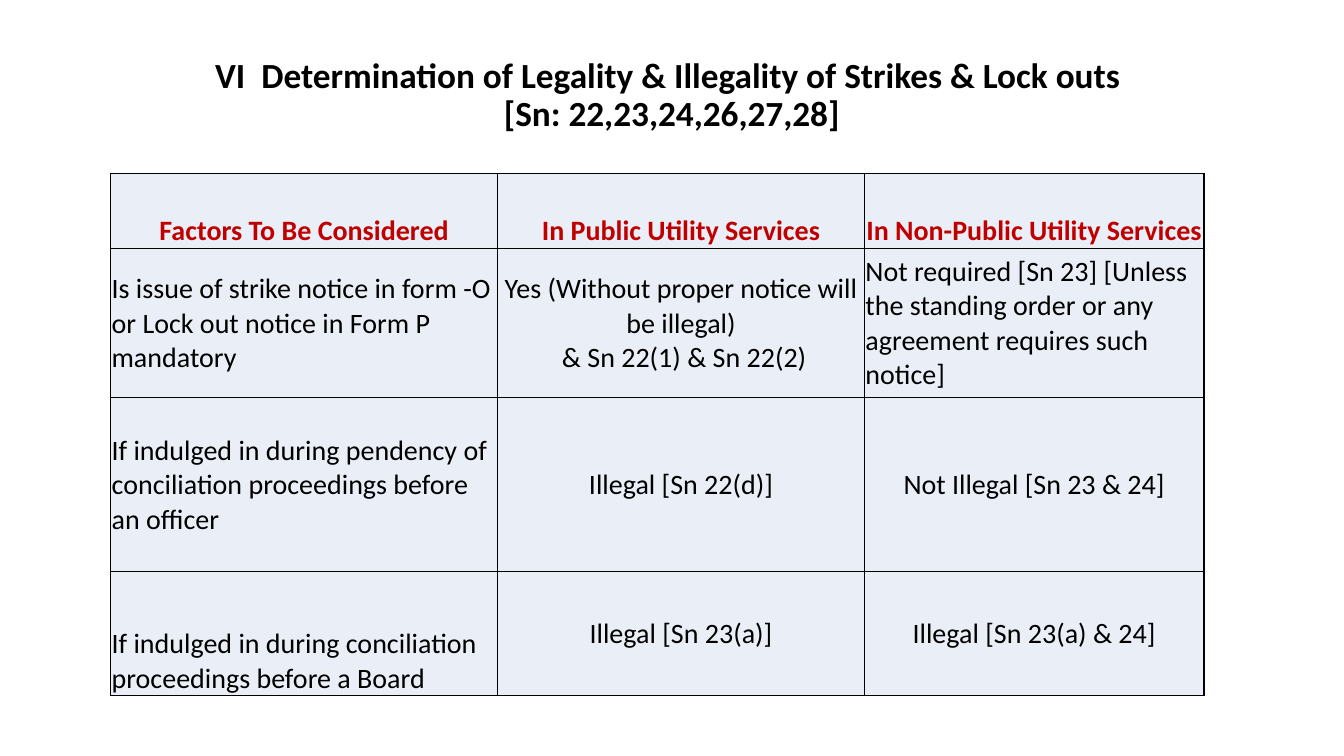
from dataclasses import dataclass

import lxml.etree
import pptx
import pptx.dml.color
import pptx.enum.text
import pptx.oxml
import pptx.oxml.ns
import pptx.util

Pt = pptx.util.Pt
Align = pptx.enum.text.PP_ALIGN
Anchor = pptx.enum.text.MSO_ANCHOR

BLACK, RED, PALE = "000000", "C00000", "EAEFF7"
WIDTHS = (276.5, 262, 242.5)
HEIGHTS = (53.5, 106.5, 124.5, 88.5)


@dataclass
class Cell:
    text: str
    align: Align = Align.CENTER
    anchor: Anchor = Anchor.MIDDLE
    color: str = BLACK
    bold: bool = False


def head(text: str) -> Cell:
    return Cell(text, anchor=Anchor.BOTTOM, color=RED, bold=True)


ROWS = (
    (
        head("Factors To Be Considered"),
        head("In Public Utility Services"),
        head("In Non-Public Utility Services"),
    ),
    (
        Cell("Is issue of strike notice in form -O or Lock out notice in Form P mandatory", Align.LEFT),
        Cell("Yes (Without proper notice will be illegal)\n & Sn 22(1) & Sn 22(2)"),
        Cell("Not required [Sn 23] [Unless the standing order or any agreement requires such notice]", Align.LEFT),
    ),
    (
        Cell("If indulged in during pendency of conciliation proceedings before an officer", Align.LEFT),
        Cell("Illegal [Sn 22(d)]"),
        Cell("Not Illegal [Sn 23 & 24]"),
    ),
    (
        Cell("If indulged in during conciliation proceedings before a Board", Align.LEFT, Anchor.BOTTOM),
        Cell("Illegal [Sn 23(a)]"),
        Cell("Illegal [Sn 23(a) & 24]"),
    ),
)


def rgb(code: str) -> pptx.dml.color.RGBColor:
    return pptx.dml.color.RGBColor.from_string(code)


def write(frame, text: str, *, size: float, color: str = BLACK, bold: bool = False,
          align: Align = Align.CENTER, space: float = 1.0) -> None:
    frame.text = text
    for para in frame.paragraphs:
        para.alignment = align
        para.line_spacing = space
        for run in para.runs:
            font = run.font
            font.name, font.size, font.bold = "Calibri", Pt(size), bold
            font.color.rgb = rgb(color)


def edge(cell, color: str, width: float) -> None:
    props = cell._tc.get_or_add_tcPr()
    for place, side in enumerate("LRTB"):
        line = pptx.oxml.parse_xml(
            f'<a:ln{side} {pptx.oxml.ns.nsdecls("a")} w="{Pt(width)}">'
            f'<a:solidFill><a:srgbClr val="{color}"/></a:solidFill></a:ln{side}>'
        )
        props.insert(place, line)


def fill(cell, data: Cell) -> None:
    write(cell.text_frame, data.text, size=20, color=data.color, bold=data.bold, align=data.align)
    cell.vertical_anchor = data.anchor
    cell.margin_left = cell.margin_right = cell.margin_top = Pt(0.75)
    cell.margin_bottom = Pt(0)
    cell.fill.solid()
    cell.fill.fore_color.rgb = rgb(PALE)
    edge(cell, BLACK, 1)


def add_title(slide) -> None:
    title = slide.shapes.title
    title.left, title.top, title.width, title.height = Pt(120), Pt(9.5), Pt(720), Pt(90)
    frame = title.text_frame
    frame.word_wrap = True
    frame.auto_size = pptx.enum.text.MSO_AUTO_SIZE.NONE
    frame.vertical_anchor = Anchor.BOTTOM
    write(
        frame,
        "VI  Determination of Legality & Illegality of Strikes & Lock outs \v[Sn: 22,23,24,26,27,28]",
        size=25.2, bold=True, space=0.9,
    )


def add_grid(slide) -> None:
    table = slide.shapes.add_table(
        len(ROWS), len(WIDTHS), Pt(79), Pt(124), Pt(sum(WIDTHS)), Pt(sum(HEIGHTS))
    ).table
    for col, width in zip(table.columns, WIDTHS):
        col.width = Pt(width)
    for row, height, cells in zip(table.rows, HEIGHTS, ROWS):
        row.height = Pt(height)
        for cell, data in zip(row.cells, cells):
            fill(cell, data)


def main() -> None:
    deck = pptx.Presentation()
    deck.slide_width, deck.slide_height = Pt(960), Pt(540)
    slide = deck.slides.add_slide(deck.slide_layouts[5])
    add_title(slide)
    add_grid(slide)
    deck.save("out.pptx")


if __name__ == "__main__":
    main()
